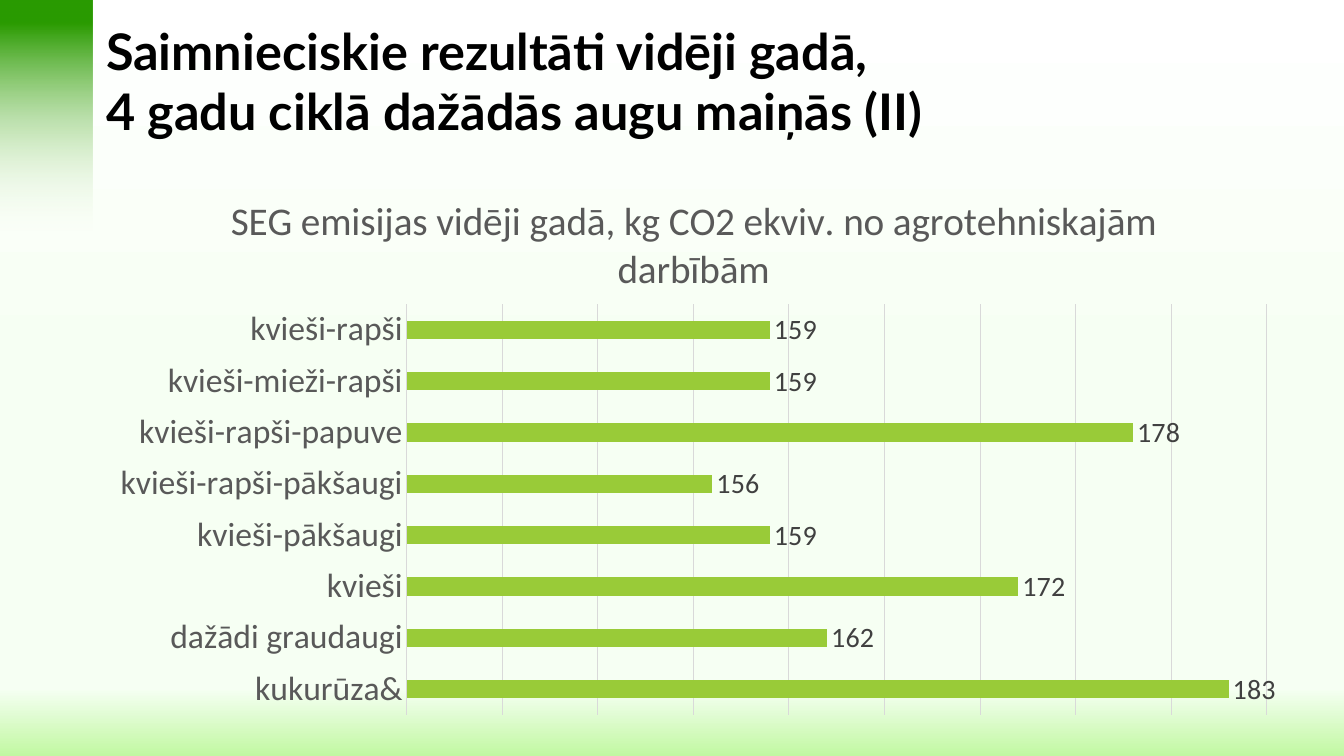
import pptx
import pptx.chart.data
import pptx.dml.color
import pptx.enum.chart
import pptx.enum.shapes
import pptx.enum.text
import pptx.oxml
import pptx.oxml.ns
import pptx.util
from lxml import etree

THEME = {
    "heading_font": "Lato", "chart_font": "Calibri",
    "title_size": 36, "chart_title_size": 28, "category_size": 24, "value_size": 20,
    "black": "000000", "axis_text": "595959", "label_text": "404040",
    "grid": "D9D9D9", "bar": "99CB38",
    "page_stops": [(0, "FFFFFF", 100), (50, "F6FFF3", 100),
                   (91, "F6FFF3", 100), (100, "C1F8A2", 100)],
    "band_stops": [(10, "2A9B00", 100), (100, "ECF9DF", 0)],
}
EMISSIONS = {
    "kukurūza&": 183, "dažādi graudaugi": 162, "kvieši": 172,
    "kvieši-pākšaugi": 159, "kvieši-rapši-pākšaugi": 156,
    "kvieši-rapši-papuve": 178, "kvieši-mieži-rapši": 159, "kvieši-rapši": 159,
}
PX = 914400 / 100.8
qn = pptx.oxml.ns.qn


def px(*lengths):
    return [pptx.util.Emu(round(length * PX)) for length in lengths]


def paint_gradient(fill, owner, stops):
    """Fill from top to bottom; each stop is percent, colour, opacity percent."""
    fill.gradient()
    fill.gradient_angle = 270
    stop_list = owner.xpath(".//a:gsLst")[0]
    for old_stop in list(stop_list):
        stop_list.remove(old_stop)
    for percent, colour, opacity in stops:
        stop = etree.SubElement(stop_list, qn("a:gs"), pos=str(percent * 1000))
        tint = etree.SubElement(stop, qn("a:srgbClr"), val=colour)
        if opacity < 100:
            etree.SubElement(tint, qn("a:alpha"), val=str(opacity * 1000))


def format_font(font, size, colour, name=THEME["chart_font"], bold=False):
    font.size = pptx.util.Pt(size)
    font.name = name
    font.bold = bold
    font.color.rgb = pptx.dml.color.RGBColor.from_string(colour)


deck = pptx.Presentation()
deck.slide_width, deck.slide_height = px(1344, 756)
page = deck.slides.add_slide(deck.slide_layouts[5])
paint_gradient(page.background.fill, page.background._cSld, THEME["page_stops"])

# Green band in the corner
band = page.shapes.add_shape(pptx.enum.shapes.MSO_SHAPE.RECTANGLE, *px(-3, 0, 96, 231))
band.shadow.inherit = False
band.line.fill.background()
paint_gradient(band.fill, band._element, THEME["band_stops"])

# Heading
title = page.shapes.title
title.left, title.top, title.width, title.height = px(96, 13, 1210, 135)
frame = title.text_frame
frame.text = "Saimnieciskie rezultāti vidēji gadā,\v4 gadu ciklā dažādās augu maiņās (II)"
frame.word_wrap = True
frame.auto_size = pptx.enum.text.MSO_AUTO_SIZE.NONE
frame.vertical_anchor = pptx.enum.text.MSO_ANCHOR.MIDDLE
para = frame.paragraphs[0]
para.alignment = pptx.enum.text.PP_ALIGN.LEFT
for span in para.runs:
    format_font(span.font, THEME["title_size"], THEME["black"], THEME["heading_font"], True)

# Emissions chart
data = pptx.chart.data.CategoryChartData(number_format="0")
data.categories = list(EMISSIONS)
data.add_series("Series 1", list(EMISSIONS.values()))
chart = page.shapes.add_chart(
    pptx.enum.chart.XL_CHART_TYPE.BAR_CLUSTERED, *px(96, 171, 1195, 555), data).chart
format_font(chart.font, THEME["value_size"], THEME["black"])
chart.has_legend = False
chart.has_title = True
chart.chart_title.include_in_layout = False
caption = chart.chart_title.text_frame
caption.text = "SEG emisijas vidēji gadā, kg CO2 ekviv. no agrotehniskajām darbībām"
format_font(caption.paragraphs[0].runs[0].font, THEME["chart_title_size"], THEME["axis_text"])

category_axis, value_axis = chart.category_axis, chart.value_axis
category_axis.major_tick_mark = pptx.enum.chart.XL_TICK_MARK.NONE
format_font(category_axis.tick_labels.font, THEME["category_size"], THEME["axis_text"])
value_axis.visible = False
value_axis.minimum_scale, value_axis.maximum_scale, value_axis.major_unit = 140, 185, 5
value_axis.has_major_gridlines = True
for line in (category_axis.format.line, value_axis.major_gridlines.format.line):
    line.color.rgb = pptx.dml.color.RGBColor.from_string(THEME["grid"])
    line.width = pptx.util.Pt(0.75)

plot = chart.plots[0]
plot.gap_width = 182
plot.vary_by_categories = False
bars = plot.series[0].format.fill
bars.solid()
bars.fore_color.rgb = pptx.dml.color.RGBColor.from_string(THEME["bar"])
plot.has_data_labels = True
labels = plot.data_labels
labels.show_value = True
labels.position = pptx.enum.chart.XL_LABEL_POSITION.OUTSIDE_END
labels.number_format = "0"
labels.number_format_is_linked = False
format_font(labels.font, THEME["value_size"], THEME["label_text"])

# Fixed place for the bars inside the chart
plot_area = chart._chartSpace.xpath(".//c:plotArea")[0]
for old_layout in plot_area.findall(qn("c:layout")):
    plot_area.remove(old_layout)
layout = etree.Element(qn("c:layout"))
plot_area.insert(0, layout)
manual = etree.SubElement(layout, qn("c:manualLayout"))
for tag, value in (("layoutTarget", "inner"), ("xMode", "edge"), ("yMode", "edge"),
                   ("x", 0.26), ("y", 0.24), ("w", 0.72), ("h", 0.74)):
    etree.SubElement(manual, qn(f"c:{tag}"), val=str(value))

deck.save("out.pptx")
